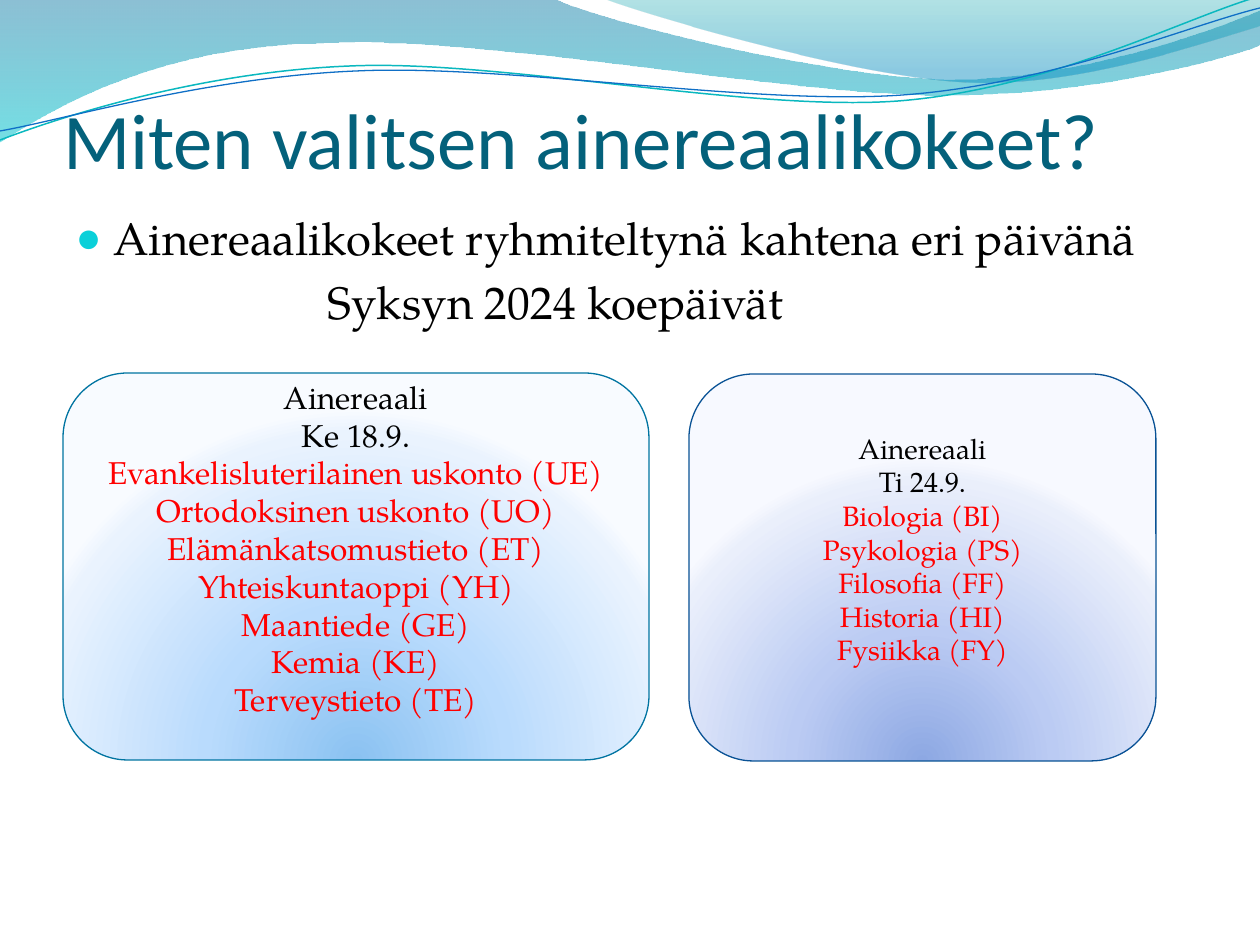
"""Build the slide on choosing the subject exams, with a wave header and two exam-day boxes."""
import pptx
import pptx.dml.color
import pptx.enum.shapes
import pptx.enum.text
import pptx.oxml
import pptx.oxml.ns
import pptx.util

PX = 914400 / 126
SERIF = "TeX Gyre Pagella"
NS = pptx.oxml.ns.nsdecls("a")
LINEAR = '<a:lin ang="5400000" scaled="0"/>'
RADIAL = '<a:path path="circle"><a:fillToRect l="50000" t="130000" r="50000" b="-30000"/></a:path>'


def rgb(color):
    return pptx.dml.color.RGBColor.from_string(color)


def set_gradient(shape, stops, direction):
    shape.fill.solid()
    solid = shape.element.spPr.find(pptx.oxml.ns.qn("a:solidFill"))
    gs = "".join(
        f'<a:gs pos="{pos * 1000}"><a:srgbClr val="{color}"><a:alpha val="{alpha * 1000}"/></a:srgbClr></a:gs>'
        for pos, color, alpha in stops)
    xml = f'<a:gradFill {NS} rotWithShape="1"><a:gsLst>{gs}</a:gsLst>{direction}</a:gradFill>'
    solid.getparent().replace(solid, pptx.oxml.parse_xml(xml))


prs = pptx.Presentation()
prs.slide_width, prs.slide_height = int(1260 * PX), int(945 * PX)
s = prs.slides.add_slide(prs.slide_layouts[1])

waves = [
    ((0, 0), [(554, -1), (600, 21, 837, 79, 955, 79), (1075, 79, 1207, 33, 1260, 11), (1261, 45),
              (1239, 55, 1096, 96, 940, 95), (784, 95, 481, 35, 324, 43), (163, 45, 58, 105, -1, 142)],
     [(0, "0074A1", 45), (100, "00C6CF", 55)], None),
    ((604, -1), [(641, 14, 859, 78, 969, 82), (1079, 87, 1211, 40, 1260, 26), (1260, 0)],
     [(0, "00A1A9", 30), (80, "008BBF", 45)], None),
    ((0, 140), [(60, 117, 199, 72, 349, 66), (498, 59, 747, 112, 898, 101), (1050, 89, 1182, 19, 1257, -3)],
     None, ("0AB8BF", 0.85)),
    ((0, 131), [(59, 121, 207, 77, 357, 71), (508, 64, 752, 106, 903, 95), (1053, 84, 1187, 26, 1260, 8)],
     None, ("0F6FC6", 0.75)),
]
for start, segments, stops, line in waves:
    points = [pair for seg in segments for pair in zip(seg[::2], seg[1::2])]
    builder = s.shapes.build_freeform(*start, scale=PX)
    builder.add_line_segments(points, close=stops is not None)
    wave = builder.convert_to_shape()
    line_tos = iter(list(wave.element.iter(pptx.oxml.ns.qn("a:lnTo"))))
    for seg in segments:
        first = next(line_tos)
        if len(seg) == 6:
            curve = pptx.oxml.parse_xml(f"<a:cubicBezTo {NS}/>")
            first.addprevious(curve)
            for node in (first, next(line_tos), next(line_tos)):
                curve.append(node[0])
                node.getparent().remove(node)
    wave.shadow.inherit = False
    if stops:
        set_gradient(wave, stops, LINEAR)
        wave.line.fill.background()
    else:
        wave.fill.background()
        wave.line.color.rgb = rgb(line[0])
        wave.line.width = pptx.util.Pt(line[1])

title, body = s.shapes.title, s.placeholders[1]
for sp, top, height in ((title, 97, 88), (body, 204, 667)):
    s.shapes.element.append(sp.element)
    sp.left, sp.top, sp.width, sp.height = (int(v * PX) for v in (63, top, 1134, height))
    sp.text_frame.auto_size = pptx.enum.text.MSO_AUTO_SIZE.NONE

tf = title.text_frame
tf.text = "Miten valitsen ainereaalikokeet?"
tf.vertical_anchor = pptx.enum.text.MSO_ANCHOR.BOTTOM
tf.margin_left = tf.margin_right = tf.margin_bottom = 0
p = tf.paragraphs[0]
p.alignment = pptx.enum.text.PP_ALIGN.LEFT
font = p.runs[0].font
font.name, font.size, font.color.rgb = "Calibri", pptx.util.Pt(45), rgb("04617B")

tf = body.text_frame
tf.text = "Ainereaalikokeet ryhmiteltynä kahtena eri päivänä\nSyksyn 2024 koepäivät"
bullet = ['<a:buClr {}><a:srgbClr val="0BD0D9"/></a:buClr>', '<a:buSzPct {} val="95000"/>',
          '<a:buFont {} typeface="Arial"/>', '<a:buChar {} char="●"/>']
for p, margin, indent, marks in zip(tf.paragraphs, (38, 252), (-38, 0), (bullet, ["<a:buNone {}/>"])):
    pPr = p._p.get_or_add_pPr()
    pPr.set("marL", str(int(margin * PX)))
    pPr.set("indent", str(int(indent * PX)))
    for mark in marks:
        pPr.append(pptx.oxml.parse_xml(mark.format(NS)))
    font = p.runs[0].font
    font.name, font.size, font.color.rgb = SERIF, pptx.util.Pt(26), rgb("000000")

boxes = [
    (63, 373, 586, 18, "0074A1", ("8BC2F1", "B9DBFD", "EAF3FE", "F8FBFF"),
     ["Ainereaali", "Ke 18.9.", "Evankelisluterilainen uskonto (UE)", "Ortodoksinen uskonto (UO)",
      "Elämänkatsomustieto (ET)", "Yhteiskuntaoppi (YH)\vMaantiede (GE)", "Kemia (KE)",
      "Terveystieto (TE)"]),
    (689, 374, 467, 16, "095295", ("8DA8E3", "BBCBF3", "EAEFFB", "F7F9FF"),
     ["Ainereaali", "Ti 24.9.", "Biologia (BI)", "Psykologia (PS)", "Filosofia (FF)", "Historia (HI)",
      "Fysiikka (FY)"]),
]
for left, top, width, size, outline, colors, lines in boxes:
    sp = s.shapes.add_shape(pptx.enum.shapes.MSO_SHAPE.ROUNDED_RECTANGLE,
                            *(int(v * PX) for v in (left, top, width, 387)))
    sp.shadow.inherit = False
    set_gradient(sp, [(pos, color, 100) for pos, color in zip((0, 43, 93, 100), colors)], RADIAL)
    sp.line.color.rgb = rgb(outline)
    sp.line.width = pptx.util.Pt(0.75)
    tf = sp.text_frame
    tf.word_wrap = True
    tf.vertical_anchor = pptx.enum.text.MSO_ANCHOR.MIDDLE
    tf.margin_top, tf.margin_bottom = int(7 * PX), int(44 * PX)
    for i, text in enumerate(lines):
        p = tf.add_paragraph() if i else tf.paragraphs[0]
        p.text = text
        p.alignment = pptx.enum.text.PP_ALIGN.CENTER
        for r in p.runs:
            r.font.name, r.font.size = SERIF, pptx.util.Pt(size)
            r.font.color.rgb = rgb("000000" if i < 2 else "FF0000")

prs.save("out.pptx")
